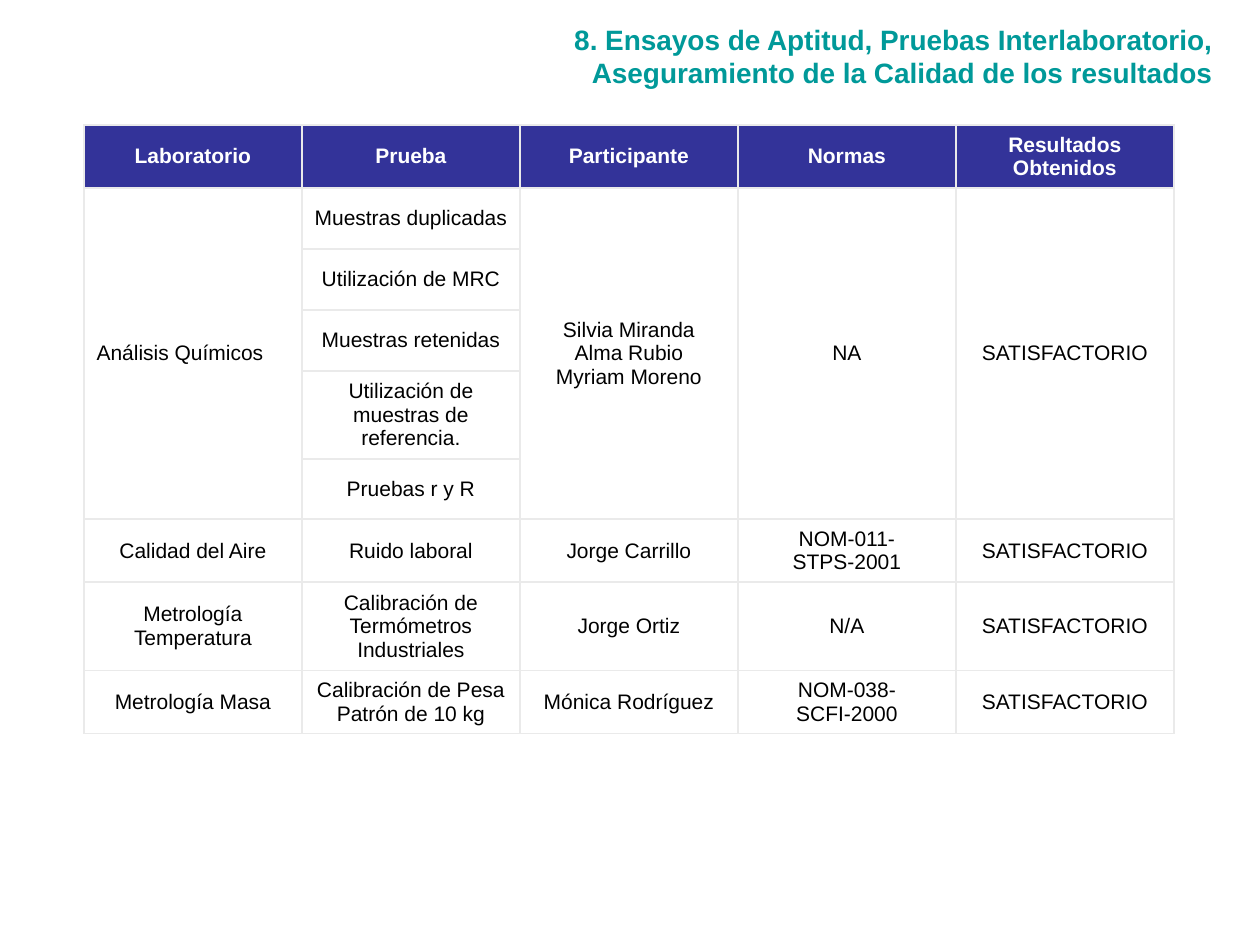
from lxml import etree
from pptx import Presentation
from pptx.dml.color import RGBColor
from pptx.enum.text import MSO_ANCHOR, MSO_AUTO_SIZE, PP_ALIGN
from pptx.oxml.ns import qn
from pptx.util import Pt

EMU_PER_PX = 914400 // 126
LEFT, CENTER, RIGHT = PP_ALIGN.LEFT, PP_ALIGN.CENTER, PP_ALIGN.RIGHT
MIDDLE = MSO_ANCHOR.MIDDLE
GROW = MSO_AUTO_SIZE.SHAPE_TO_FIT_TEXT

TEAL = RGBColor(0x00, 0x99, 0x99)
INDIGO = RGBColor(0x33, 0x33, 0x99)
BORDER_GRAY = RGBColor(0xEA, 0xEA, 0xEA)
WHITE = RGBColor(0xFF, 0xFF, 0xFF)
BLACK = RGBColor(0x00, 0x00, 0x00)

TITLE_FORMAT = {"size": Pt(16), "bold": True}
HEADER_FORMAT = {"size": Pt(12), "bold": True}
BODY_FORMAT = {"size": Pt(12), "bold": False}

TITLE_LINES = [
    "8. Ensayos de Aptitud, Pruebas Interlaboratorio,",
    "Aseguramiento de la Calidad de los resultados",
]
RESULT = "SATISFACTORIO"
TEST_ROWS = [
    ["Laboratorio", "Prueba", "Participante", "Normas", "Resultados Obtenidos"],
    ["Análisis Químicos", "Muestras duplicadas",
     "Silvia Miranda\vAlma Rubio\vMyriam Moreno", "NA", RESULT],
    ["", "Utilización de MRC", "", "", ""],
    ["", "Muestras retenidas", "", "", ""],
    ["", "Utilización de muestras de referencia.", "", "", ""],
    ["", "Pruebas r y R", "", "", ""],
    ["Calidad del Aire", "Ruido laboral", "Jorge Carrillo", "NOM-011-STPS-2001", RESULT],
    ["Metrología Temperatura", "Calibración de Termómetros Industriales",
     "Jorge Ortiz", "N/A", RESULT],
    ["Metrología Masa", "Calibración de Pesa Patrón de 10 kg",
     "Mónica Rodríguez", "NOM-038-SCFI-2000", RESULT],
]
ROW_HEIGHTS = [63, 61, 61, 61, 88, 60, 63, 88, 63]
COLUMN_WIDTH = 218
CHEMISTRY_ROWS = (1, 5)
SHARED_COLUMNS = (0, 2, 3, 4)


def px(length):
    return length * EMU_PER_PX


class SlideBuilder:
    """Draws styled elements on the current slide."""

    font_name = "Arial"
    border_width = Pt(1)

    def __init__(self, slide):
        self.slide = slide

    def style(self, paragraph, align, color, font_format):
        paragraph.alignment = align
        paragraph.font.name = self.font_name
        paragraph.font.color.rgb = color
        for attribute, value in font_format.items():
            setattr(paragraph.font, attribute, value)

    def title(self, lines, left, top, width, height):
        heading = self.slide.shapes.add_textbox(px(left), px(top), px(width), px(height))
        frame = heading.text_frame
        frame.word_wrap = True
        frame.auto_size = GROW
        frame.text = "\n".join(lines)
        for paragraph in frame.paragraphs:
            self.style(paragraph, RIGHT, TEAL, TITLE_FORMAT)

    def borders(self, cell):
        properties = cell._tc.get_or_add_tcPr()
        for side in ("a:lnL", "a:lnR", "a:lnT", "a:lnB"):
            line = etree.SubElement(properties, qn(side), w=str(self.border_width))
            fill = etree.SubElement(line, qn("a:solidFill"))
            etree.SubElement(fill, qn("a:srgbClr"), val=str(BORDER_GRAY))

    def cell(self, cell, text, align, is_header):
        cell.text = text
        cell.vertical_anchor = MIDDLE
        self.borders(cell)
        if is_header:
            cell.fill.solid()
            cell.fill.fore_color.rgb = INDIGO
        else:
            cell.fill.background()
        color = WHITE if is_header else BLACK
        font_format = HEADER_FORMAT if is_header else BODY_FORMAT
        for paragraph in cell.text_frame.paragraphs:
            self.style(paragraph, align, color, font_format)

    def table(self, rows, left, top, column_width, row_heights):
        column_count = len(rows[0])
        grid = self.slide.shapes.add_table(
            len(rows), column_count, px(left), px(top),
            px(column_width * column_count), px(sum(row_heights))).table
        grid.first_row = grid.horz_banding = False
        for column in grid.columns:
            column.width = px(column_width)
        for row, height in zip(grid.rows, row_heights):
            row.height = px(height)
        for r, texts in enumerate(rows):
            for c, text in enumerate(texts):
                align = LEFT if (r, c) == (CHEMISTRY_ROWS[0], 0) else CENTER
                self.cell(grid.cell(r, c), text, align, r == 0)
        first, last = CHEMISTRY_ROWS
        for c in SHARED_COLUMNS:
            grid.cell(first, c).merge(grid.cell(last, c))


def main():
    presentation = Presentation()
    presentation.slide_width = px(1260)
    presentation.slide_height = px(945)
    builder = SlideBuilder(presentation.slides.add_slide(presentation.slide_layouts[6]))
    builder.title(TITLE_LINES, 134, 16, 1091, 81)
    builder.table(TEST_ROWS, 84, 125, COLUMN_WIDTH, ROW_HEIGHTS)
    presentation.save("out.pptx")


if __name__ == "__main__":
    main()
